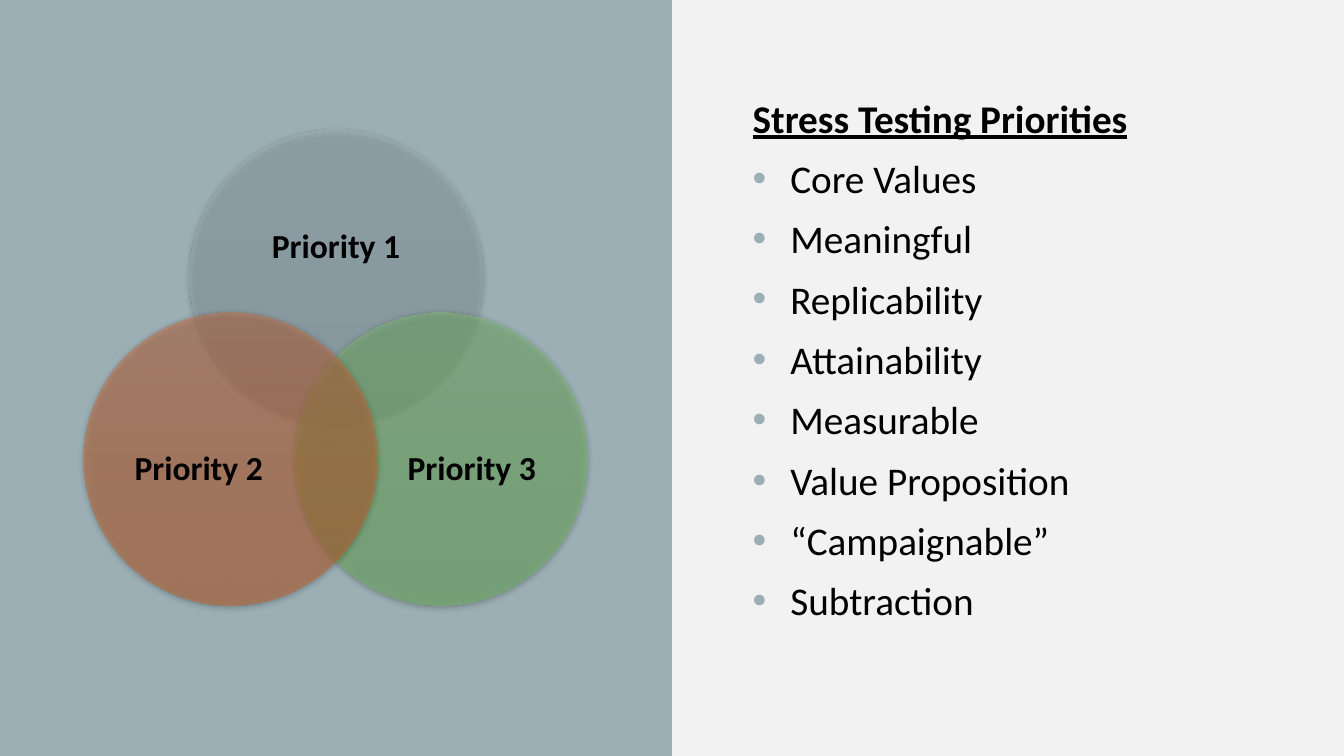
from pptx import Presentation
from pptx.dml.color import RGBColor
from pptx.enum.shapes import MSO_SHAPE as Shape
from pptx.enum.text import MSO_ANCHOR as Anchor, PP_ALIGN as Align
from pptx.oxml import parse_xml
from pptx.oxml.ns import nsdecls, qn
from pptx.util import Cm, Pt

WIDTH, HEIGHT = 33.87, 19.05
PANEL, PAPER, INK = "9BAFB5", "F2F2F2", "000000"
DIAMETER = 7.39
PRIORITIES = [
    ("Priority 1", (8.47, 6.97), (0, -0.74), (5.41, 3.33), ("A3B5BB", "9BAFB5", "93A9AF")),
    ("Priority 3", (11.11, 11.57), (0.78, 0.27), (4.42, 4.06), ("85C076", "7ABD68", "73B960")),
    ("Priority 2", (5.81, 11.57), (-0.8, 0.27), (4.42, 4.06), ("CC734B", "CB662F", "C86128")),
]
HEADING = "Stress Testing Priorities"
TESTS = ["Core Values", "Meaningful", "Replicability", "Attainability", "Measurable",
         "Value Proposition", "“Campaignable”", "Subtraction"]


def color(value):
    return RGBColor.from_string(value)


def apply(target, formats):
    for name, value in formats.items():
        setattr(target, name, value)


def centered(center, size):
    return [middle - length / 2 for middle, length in zip(center, size)] + list(size)


class SlideBuilder:
    font = "Calibri"

    def __init__(self, deck):
        self.page = deck.slides.add_slide(deck.slide_layouts[6])

    def background(self, value):
        fill = self.page.background.fill
        fill.solid()
        fill.fore_color.rgb = color(value)

    def shape(self, kind, bounds, value):
        shape = self.page.shapes.add_shape(kind, *map(Cm, bounds))
        shape.shadow.inherit = False
        shape.fill.solid()
        shape.fill.fore_color.rgb = color(value)
        shape.line.fill.background()
        return shape

    def circle(self, center, shades):
        bounds = centered(center, (DIAMETER, DIAMETER))
        properties = self.shape(Shape.OVAL, bounds, shades[1])._element.spPr
        stops = "".join(
            f'<a:gs pos="{index * 50000}"><a:srgbClr val="{shade}">'
            '<a:alpha val="50000"/></a:srgbClr></a:gs>'
            for index, shade in enumerate(shades))
        gradient = parse_xml(
            f'<a:gradFill {nsdecls("a")} rotWithShape="1"><a:gsLst>{stops}</a:gsLst>'
            '<a:lin ang="5400000" scaled="0"/></a:gradFill>')
        properties.replace(properties.find(qn("a:solidFill")), gradient)
        properties.find(qn("a:effectLst")).append(parse_xml(
            f'<a:outerShdw {nsdecls("a")} blurRad="{Pt(4.4)}" dist="{Pt(1.2)}" '
            f'dir="5400000" rotWithShape="0"><a:srgbClr val="{INK}">'
            '<a:alpha val="45000"/></a:srgbClr></a:outerShdw>'))

    def textbox(self, bounds, formats):
        frame = self.page.shapes.add_textbox(*map(Cm, bounds)).text_frame
        apply(frame, {"word_wrap": True, **formats})
        return frame

    def add_text(self, para, text, para_formats, font_formats):
        apply(para, para_formats)
        span = para.add_run()
        span.text = text
        apply(span.font, {"name": self.font, **font_formats})
        span.font.color.rgb = color(INK)

    def label(self, text, center, size):
        margins = dict.fromkeys(
            ("margin_left", "margin_top", "margin_right", "margin_bottom"), 0)
        box = self.textbox(centered(center, size),
                           {"vertical_anchor": Anchor.MIDDLE, **margins})
        self.add_text(box.paragraphs[0], text,
                      {"alignment": Align.CENTER, "line_spacing": 0.9, "space_after": Pt(8.4)},
                      {"size": Pt(24), "bold": True})

    def bullet(self, para):
        properties = para._p.get_or_add_pPr()
        indent = Cm(0.95)
        properties.set("marL", str(indent))
        properties.set("indent", str(-indent))
        for content in (f'buClr {nsdecls("a")}><a:srgbClr val="{PANEL}"/></a:buClr>',
                        f'buFont {nsdecls("a")} typeface="Arial"/>',
                        f'buChar {nsdecls("a")} char="•"/>'):
            properties.append(parse_xml("<a:" + content))

    def checklist(self, bounds, heading, items):
        box = self.textbox(bounds, {"vertical_anchor": Anchor.TOP})
        spacing = {"space_before": Pt(9.5)}
        self.add_text(box.paragraphs[0], heading, spacing,
                      {"size": Pt(28), "bold": True, "underline": True})
        for item in items:
            para = box.add_paragraph()
            self.add_text(para, item, spacing, {"size": Pt(28)})
            self.bullet(para)


def main():
    deck = Presentation()
    apply(deck, {"slide_width": Cm(WIDTH), "slide_height": Cm(HEIGHT)})
    slide = SlideBuilder(deck)
    slide.background(PAPER)
    slide.shape(Shape.RECTANGLE, (0, 0, WIDTH / 2, HEIGHT), PANEL)
    for text, center, offset, size, shades in PRIORITIES:
        slide.circle(center, shades)
        slide.label(text, [middle + shift for middle, shift in zip(center, offset)], size)
    slide.checklist((18.72, 2.24, 13.39, 14.58), HEADING, TESTS)
    deck.save("out.pptx")


if __name__ == "__main__":
    main()
